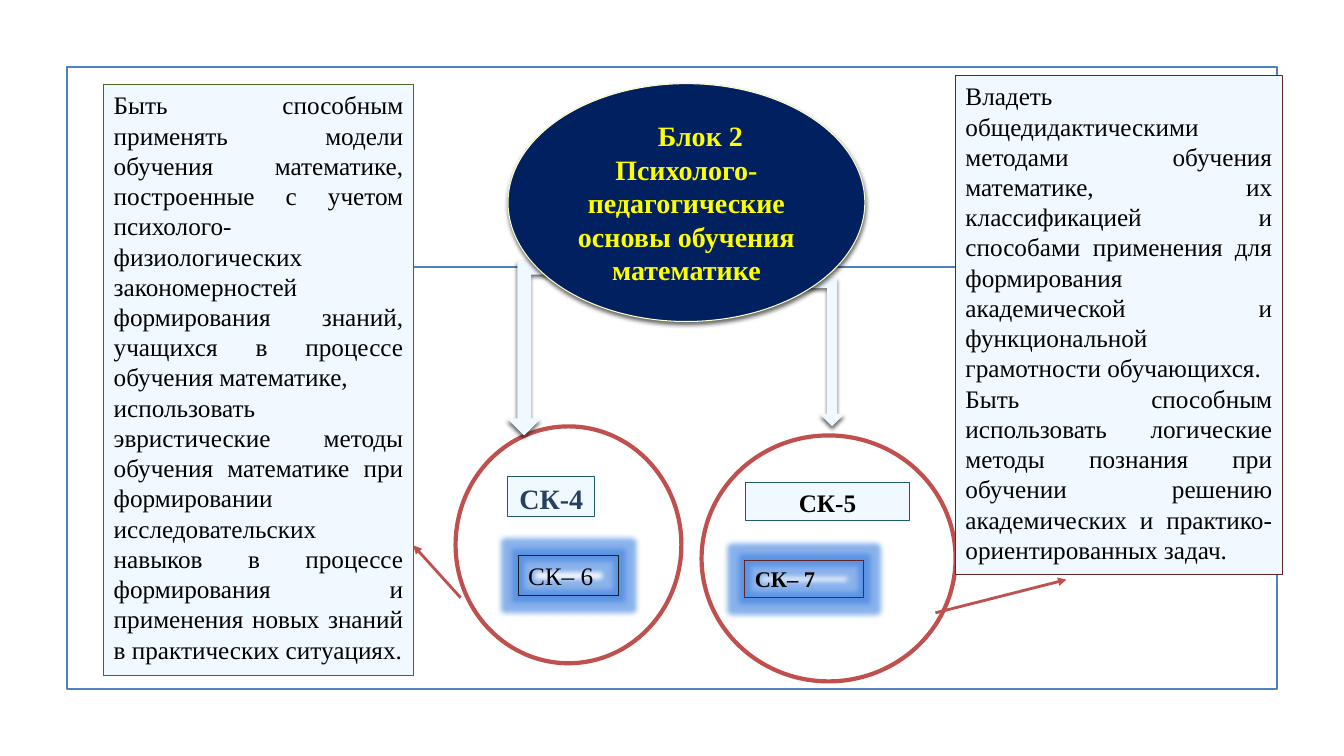
from lxml import etree
from pptx import Presentation
from pptx.dml.color import RGBColor
from pptx.enum.shapes import MSO_CONNECTOR, MSO_SHAPE
from pptx.enum.text import MSO_ANCHOR, PP_ALIGN
from pptx.oxml.ns import qn
from pptx.util import Inches, Pt

RECT, OVAL, BENT = MSO_SHAPE.RECTANGLE, MSO_SHAPE.OVAL, MSO_SHAPE.BENT_UP_ARROW
LEFT, CENTER, JUSTIFY = PP_ALIGN.LEFT, PP_ALIGN.CENTER, PP_ALIGN.JUSTIFY
TOP, MIDDLE = MSO_ANCHOR.TOP, MSO_ANCHOR.MIDDLE
FONT = "Times New Roman"
PALE, BLUE, RED, BLACK = "EFF9FF", "4F81BD", "C0504D", "000000"

# Content; places are left, top, width, height on a grid of 160 columns by 90 rows
COLS, ROWS = 160, 90
FRAME = (8, 8, 144, 74)
RULE = (18.36, 31.8, 141.72, 31.8)
CIRCLES = [(54.24, 50.76, 26.88, 28.2), (83.52, 51.84, 30.24, 29.28)]
# text, place, size, colour
SKILLS = [
    ("СК-4", (60.48, 56.76, 10.32, 4.68), 20, "254061"),
    ("СК-5", (88.8, 57.48, 19.44, 4.44), 18, BLACK),
]
# place, flips
BENT_ARROWS = [
    ((94.56, 33.12, 6, 17.64), ["flipV"]),
    ((60.36, 31.08, 8.16, 20.76), ["flipH", "flipV"]),
]
TITLE = ["Блок 2", "Психолого-педагогические основы обучения математике"]
TITLE_PLACE = (60.48, 9.96, 42.48, 28.32)
# paragraphs, place, line colour
PANELS = [
    (["Владеть общедидактическими методами обучения математике, их классификацией "
      "и способами применения для формирования академической и функциональной "
      "грамотности обучающихся.",
      "Быть способным использовать логические методы познания при обучении решению "
      "академических и практико- ориентированных задач. "],
     (113.76, 9, 38.88, 59.4), "632523"),
    (["Быть способным применять модели обучения математике, построенные с учетом "
      "психолого- физиологических закономерностей формирования знаний, учащихся "
      "в процессе обучения математике,",
      "использовать эвристические методы обучения математике при формировании "
      "исследовательских навыков в процессе формирования и применения новых знаний "
      "в практических ситуациях."],
     (12.36, 10.08, 36.84, 70.32), "4F6228"),
]
# text, place, size, bold, line colour
GLOWING = [
    ("СК– 6", (61.68, 66.12, 12, 4.8), 18, False, "1E1C11"),
    ("СК– 7", (88.68, 66.72, 14.16, 4.44), 16, True, "632523"),
]
POINTERS = [(54.84, 71.16, 49.2, 64.92), (111.36, 72.96, 126.96, 69)]

prs = Presentation()
prs.slide_width, prs.slide_height = Inches(13.33), Inches(7.5)
slide = prs.slides.add_slide(prs.slide_layouts[6])


def rgb(color):
    return RGBColor.from_string(color)


def grid(place):
    steps = (prs.slide_width / COLS, prs.slide_height / ROWS) * 2
    return [round(n * step) for n, step in zip(place, steps)]


def add_shape(kind, place, fill=None, line=None, width=0.75):
    s = slide.shapes.add_shape(kind, *grid(place))
    s.shadow.inherit = False
    if fill:
        s.fill.solid()
        s.fill.fore_color.rgb = rgb(fill)
    else:
        s.fill.background()
    if line:
        s.line.color.rgb = rgb(line)
        s.line.width = Pt(width)
    else:
        s.line.fill.background()
    return s


def add_effect(s, name, color, alpha, **attrs):
    effects = s._element.spPr.find(qn("a:effectLst"))
    effect = etree.SubElement(effects, qn("a:" + name), attrs)
    clr = etree.SubElement(effect, qn("a:srgbClr"), val=color)
    etree.SubElement(clr, qn("a:alpha"), val=str(alpha * 1000))


def add_shadow(s):
    add_effect(s, "outerShdw", BLACK, 60, blurRad=str(Pt(3)), dist=str(Pt(2)),
               dir="5400000", rotWithShape="0")


def write(s, paragraphs, size, color, align, bold=False, anchor=TOP):
    tf = s.text_frame
    tf.word_wrap = True
    tf.vertical_anchor = anchor
    for i, text in enumerate(paragraphs):
        p = tf.add_paragraph() if i else tf.paragraphs[0]
        p.alignment = align
        r = p.add_run()
        r.text = text
        r.font.name, r.font.size, r.font.bold = FONT, Pt(size), bold
        r.font.color.rgb = rgb(color)


def add_line(ends, color, width, arrow=False):
    s = slide.shapes.add_connector(MSO_CONNECTOR.STRAIGHT, *grid(ends))
    s.line.color.rgb = rgb(color)
    s.line.width = Pt(width)
    if arrow:
        etree.SubElement(s.line._get_or_add_ln(), qn("a:tailEnd"), type="triangle")
    etree.SubElement(s._element.spPr, qn("a:effectLst"))


# Frame and rule
add_shape(RECT, FRAME, line=BLUE, width=1.25)
add_line(RULE, BLUE, 1.25)

# Circles with their skill labels
for circle, (text, place, size, color) in zip(CIRCLES, SKILLS):
    add_shape(OVAL, circle, line=RED, width=3)
    write(add_shape(RECT, place, PALE, "215968"), [text], size, color, CENTER, True)

# Bent arrows from the title down to the circles
for place, flips in BENT_ARROWS:
    s = add_shape(BENT, place, PALE)
    for i, share in enumerate((0.2, 0.25, 0.25)):
        s.adjustments[i] = share
    for flip in flips:
        s._element.spPr.xfrm.set(flip, "1")
    add_shadow(s)

# Title oval, first line indented
s = add_shape(OVAL, TITLE_PLACE, "002060", "FFFFCC")
add_shadow(s)
write(s, TITLE, 20, "FFFF00", CENTER, True, MIDDLE)
s.text_frame.paragraphs[0]._p.get_or_add_pPr().set("marL", str(Pt(20)))

# Text panels
for paragraphs, place, line in PANELS:
    write(add_shape(RECT, place, PALE, line), paragraphs, 18, BLACK, JUSTIFY)

# Glowing labels
for text, place, size, bold, line in GLOWING:
    s = add_shape(RECT, place, line=line)
    add_effect(s, "glow", "3C80E0", 60, rad=str(Pt(8)))
    write(s, [text], size, BLACK, LEFT, bold)

# Pointers from circles to panels
for ends in POINTERS:
    add_line(ends, RED, 2, arrow=True)

prs.save("out.pptx")
